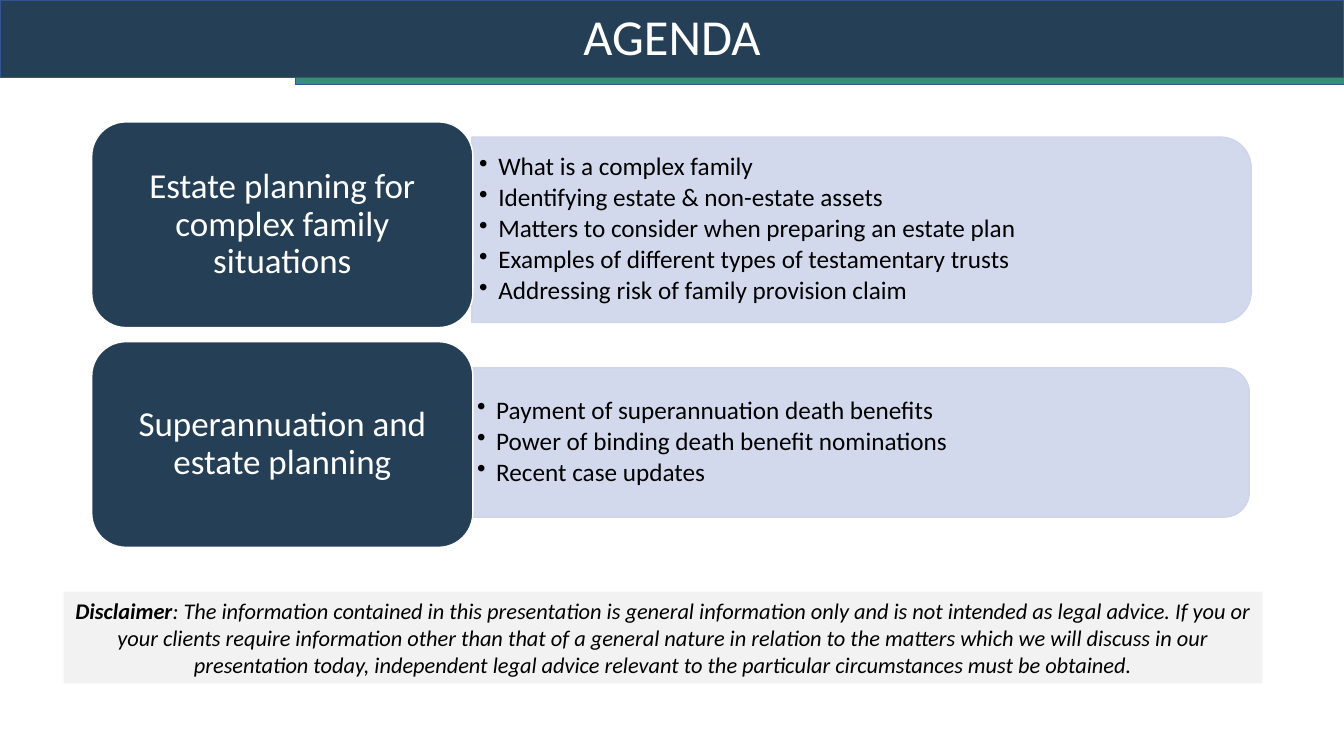
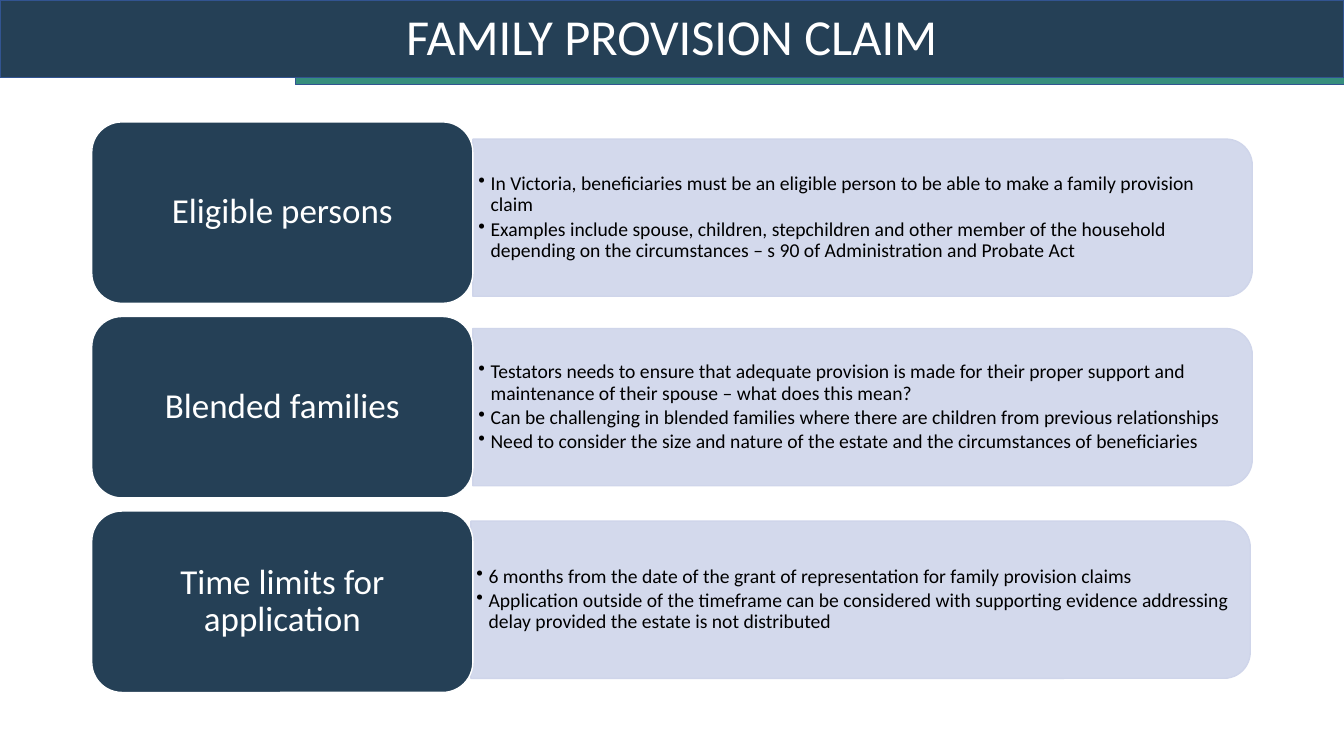
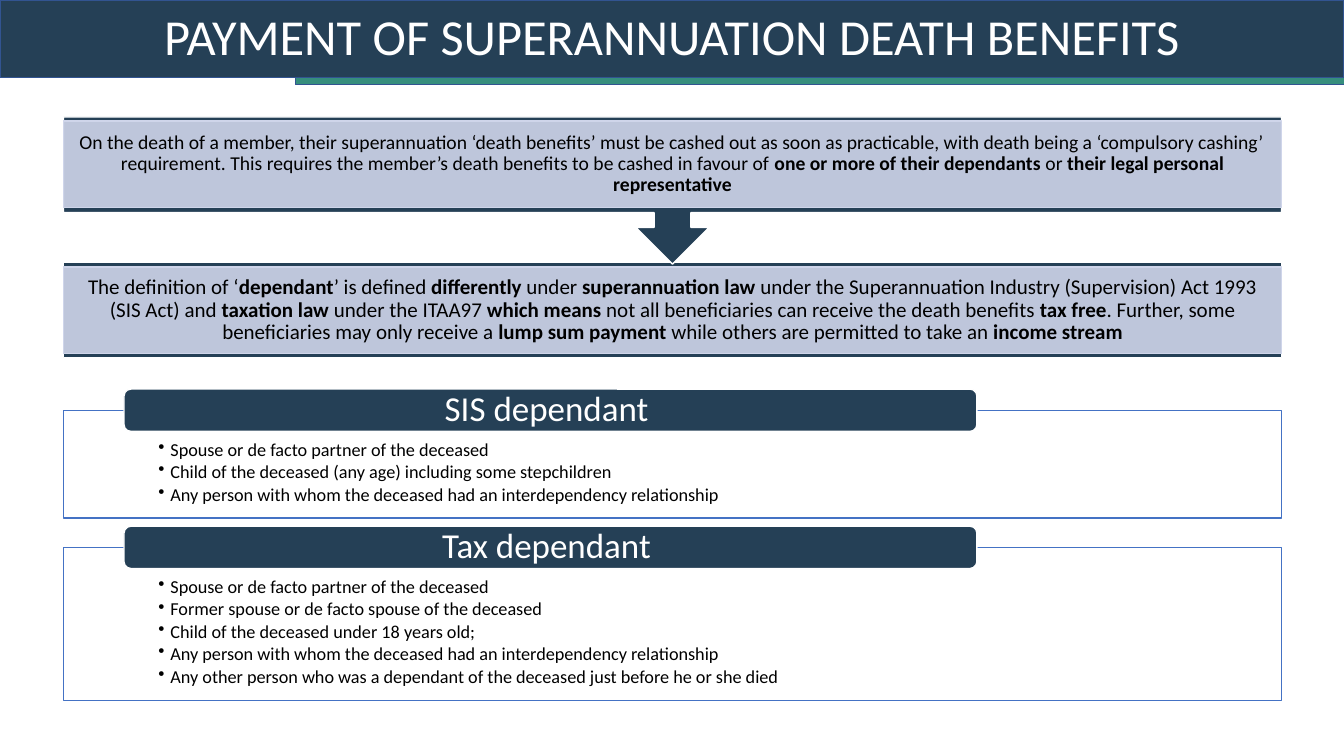
from dataclasses import dataclass

from lxml import etree
from pptx import Presentation
from pptx.dml.color import RGBColor
from pptx.enum.shapes import MSO_SHAPE
from pptx.enum.text import MSO_ANCHOR, MSO_AUTO_SIZE, PP_ALIGN
from pptx.oxml.ns import qn
from pptx.util import Inches, Pt

RECTANGLE = MSO_SHAPE.RECTANGLE
ROUNDED = MSO_SHAPE.ROUNDED_RECTANGLE
ROUNDED_END = MSO_SHAPE.ROUND_2_SAME_RECTANGLE
CALLOUT = MSO_SHAPE.UP_ARROW_CALLOUT
TOP, MIDDLE = MSO_ANCHOR.TOP, MSO_ANCHOR.MIDDLE
LEFT, CENTER = PP_ALIGN.LEFT, PP_ALIGN.CENTER
NO_AUTOFIT = MSO_AUTO_SIZE.NONE


@dataclass(frozen=True)
class Theme:
    font: str = "Calibri"
    navy: str = "254056"
    green: str = "368E7D"
    band_line: str = "325491"
    pale: str = "CFD5EA"
    outline: str = "4472C4"
    grey: str = "F2F2F2"
    white: str = "FFFFFF"
    black: str = "000000"
    title_size: int = 36
    label_size: int = 25
    line_spacing: float = 0.9


THEME = Theme()
SLIDE_WIDTH, SLIDE_HEIGHT = 13.33, 7.5
TITLE_BOX = (0, 0, SLIDE_WIDTH, 0.77)
ACCENT_BOX = (2.93, 0.77, 10.41, 0.07)
LABEL_LEFT, LABEL_TOP, LABEL_WIDTH = 0.91, 1.21, 3.78
PANEL_WIDTH = 7.73
BODY_LEFT, BODY_WIDTH = 0.63, 12.08

AGENDA = {
    "title": "AGENDA",
    "label_height": 2.04, "pitch": 2.18, "size": 18, "indent": 0.19,
    "rows": [
        ("Estate planning for complex family situations", (4.68, 2.28, 1.84), [
            "What is a complex family",
            "Identifying estate & non-estate assets",
            "Matters to consider when preparing an estate plan",
            "Examples of different types of testamentary trusts",
            "Addressing risk of family provision claim",
        ]),
        ("Superannuation and estate planning", (4.66, 4.39, 1.48), [
            "Payment of superannuation death benefits",
            "Power of binding death benefit nominations",
            "Recent case updates",
        ]),
    ],
}
DISCLAIMER = (
    "*Disclaimer*: The information contained in this presentation is general information only "
    "and is not intended as legal advice. If you or your clients require information other than "
    "that of a general nature in relation to the matters which we will discuss in our "
    "presentation today, independent legal advice relevant to the particular circumstances "
    "must be obtained."
)
CLAIM = {
    "title": "FAMILY PROVISION CLAIM",
    "label_height": 1.8, "pitch": 1.93, "size": 14, "indent": 0.12,
    "rows": [
        ("Eligible persons", (4.69, 2.16, 1.56), [
            "In Victoria, beneficiaries must be an eligible person to be able to make a family "
            "provision claim",
            "Examples include spouse, children, stepchildren and other member of the household "
            "depending on the circumstances – s 90 of Administration and Probate Act",
        ]),
        ("Blended families", (4.69, 4.04, 1.56), [
            "Testators needs to ensure that adequate provision is made for their proper support "
            "and maintenance of their spouse – what does this mean?",
            "Can be challenging in blended families where there are children from previous "
            "relationships",
            "Need to consider the size and nature of the estate and the circumstances of "
            "beneficiaries",
        ]),
        ("Time limits for application", (4.67, 5.95, 1.56), [
            "6 months from the date of the grant of representation for family provision claims",
            "Application outside of the timeframe can be considered with supporting evidence "
            "addressing delay provided the estate is not distributed",
        ]),
    ],
}
BENEFITS_TITLE = "PAYMENT OF SUPERANNUATION DEATH BENEFITS"
STATEMENTS = [
    (RECTANGLE, 2.6, 0.95, 0, 2.65, 15,
     "The definition of ‘*dependant*’ is defined *differently* under *superannuation law *under "
     "the Superannuation Industry (Supervision) Act 1993 (SIS Act) and *taxation law *under the "
     "ITAA97 *which means* not all beneficiaries can receive the death benefits *tax free*. "
     "Further, some beneficiaries may only receive a *lump sum payment *while others are "
     "permitted to take an *income stream*"),
    (CALLOUT, 1.16, 1.46, 180, 1.2, 14,
     "On the death of a member, their superannuation ‘death benefits’ must be cashed out as soon "
     "as practicable, with death being a ‘compulsory cashing’ requirement. This requires the "
     "member’s death benefits to be cashed in favour of *one or more of their dependants* or "
     "*their legal personal representative*"),
]
DEPENDANTS = [
    ("SIS dependant ", 4.07, 1.07, [
        "Spouse or de facto partner of the deceased",
        "Child of the deceased (any age) including some stepchildren",
        "Any person with whom the deceased had an interdependency relationship",
    ]),
    ("Tax dependant ", 5.43, 1.52, [
        "Spouse or de facto partner of the deceased",
        "Former spouse or de facto spouse of the deceased",
        "Child of the deceased under 18 years old;",
        "Any person with whom the deceased had an interdependency relationship",
        "Any other person who was a dependant of the deceased just before he or she died",
    ]),
]


def color(value):
    return RGBColor.from_string(value)


def place(shape, box):
    shape.left, shape.top, shape.width, shape.height = map(Inches, box)


def add_box(slide, kind, box, fill, line, opacity=100):
    shape = slide.shapes.add_shape(kind, *map(Inches, box))
    shape.shadow.inherit = False
    shape.fill.solid()
    shape.fill.fore_color.rgb = color(fill)
    shape.line.color.rgb = color(line)
    shape.line.width = Pt(1)
    if opacity < 100:
        fill_color = shape.element.spPr.find(qn("a:solidFill"))[0]
        etree.SubElement(fill_color, qn("a:alpha")).set("val", str(opacity * 1000))
    return shape


def write(shape, texts, size, text_color=THEME.black, align=CENTER, anchor=MIDDLE,
          insets=(0.1, 0.05, 0.1, 0.05), spacing=THEME.line_spacing, indent=0, italic=False):
    frame = shape.text_frame
    frame.word_wrap = True
    frame.auto_size = NO_AUTOFIT
    frame.vertical_anchor = anchor
    frame.margin_left, frame.margin_top, frame.margin_right, frame.margin_bottom = map(Inches, insets)
    for index, text in enumerate(texts):
        paragraph = frame.add_paragraph() if index else frame.paragraphs[0]
        paragraph.alignment = align
        paragraph.line_spacing = spacing
        if indent:
            paragraph.space_after = Pt(0.15 * size)
            properties = paragraph._p.get_or_add_pPr()
            properties.set("marL", str(Inches(indent)))
            properties.set("indent", str(-Inches(indent)))
            etree.SubElement(properties, qn("a:buChar")).set("char", "•")
        font = paragraph.font
        font.name, font.size, font.italic = THEME.font, Pt(size), italic
        font.color.rgb = color(text_color)
        for position, part in enumerate(text.split("*")):
            if part:
                run = paragraph.add_run()
                run.text = part
                if position % 2:
                    run.font.bold = True


def add_label(slide, box, text, insets=(0.1, 0.05, 0.1, 0.05)):
    label = add_box(slide, ROUNDED, box, THEME.navy, THEME.white)
    write(label, [text], THEME.label_size, THEME.white, insets=insets)


def add_titled_slide(presentation, title):
    slide = presentation.slides.add_slide(presentation.slide_layouts[5])
    place(slide.shapes.title, TITLE_BOX)
    write(slide.shapes.title, [title], THEME.title_size, THEME.white)
    return slide


def add_bands_to_layout(slide):
    for index, (box, fill) in enumerate([(TITLE_BOX, THEME.navy), (ACCENT_BOX, THEME.green)]):
        band = add_box(slide, RECTANGLE, box, fill, THEME.band_line)
        slide.slide_layout.shapes.element.insert(2 + index, band.element)


def add_panel(slide, left, middle, height, bullets, size, indent):
    center = left + PANEL_WIDTH / 2
    upright = (center - height / 2, middle - PANEL_WIDTH / 2, height, PANEL_WIDTH)
    panel = add_box(slide, ROUNDED_END, upright, THEME.pale, THEME.pale, 90)
    panel.rotation = 90
    margin = 0.05 * height
    text_box = slide.shapes.add_textbox(*map(Inches, (
        left, middle - height / 2 + margin, PANEL_WIDTH - margin, height - 2 * margin)))
    side = 0.004 * size
    write(text_box, bullets, size, align=LEFT, indent=indent,
          insets=(side, side / 2, side, side / 2))


def build_topics(presentation, content):
    slide = add_titled_slide(presentation, content["title"])
    for index, (label, panel, bullets) in enumerate(content["rows"]):
        add_panel(slide, *panel, bullets, content["size"], content["indent"])
        top = LABEL_TOP + index * content["pitch"]
        add_label(slide, (LABEL_LEFT, top, LABEL_WIDTH, content["label_height"]), label)
    return slide


def build_benefits(presentation):
    slide = add_titled_slide(presentation, BENEFITS_TITLE)
    for kind, top, height, rotation, panel_top, size, text in STATEMENTS:
        backing = add_box(slide, kind, (BODY_LEFT, top, BODY_WIDTH, height), THEME.navy, THEME.white)
        backing.rotation = rotation
        panel = add_box(slide, RECTANGLE, (BODY_LEFT, panel_top, BODY_WIDTH, 0.86),
                        THEME.pale, THEME.pale, 90)
        write(panel, [text], size, insets=(0.11, 0.02, 0.11, 0.02))
    for label, top, height, bullets in DEPENDANTS:
        panel = add_box(slide, RECTANGLE, (BODY_LEFT, top, BODY_WIDTH, height),
                        THEME.white, THEME.outline)
        write(panel, bullets, 13, align=LEFT, anchor=TOP, indent=0.12,
              insets=(0.94, 0.3, 0.94, 0.1))
        add_label(slide, (1.23, top - 0.21, 8.46, 0.42), label, insets=(0.32, 0, 0.32, 0))


def main():
    presentation = Presentation()
    presentation.slide_width = Inches(SLIDE_WIDTH)
    presentation.slide_height = Inches(SLIDE_HEIGHT)
    agenda = build_topics(presentation, AGENDA)
    add_bands_to_layout(agenda)
    disclaimer = add_box(agenda, RECTANGLE, (BODY_LEFT, 5.87, 11.89, 0.91), THEME.grey, THEME.grey)
    disclaimer.line.fill.background()
    write(disclaimer, [DISCLAIMER], 16, spacing=1.0, italic=True)
    build_topics(presentation, CLAIM)
    build_benefits(presentation)
    presentation.save("out.pptx")


if __name__ == "__main__":
    main()
